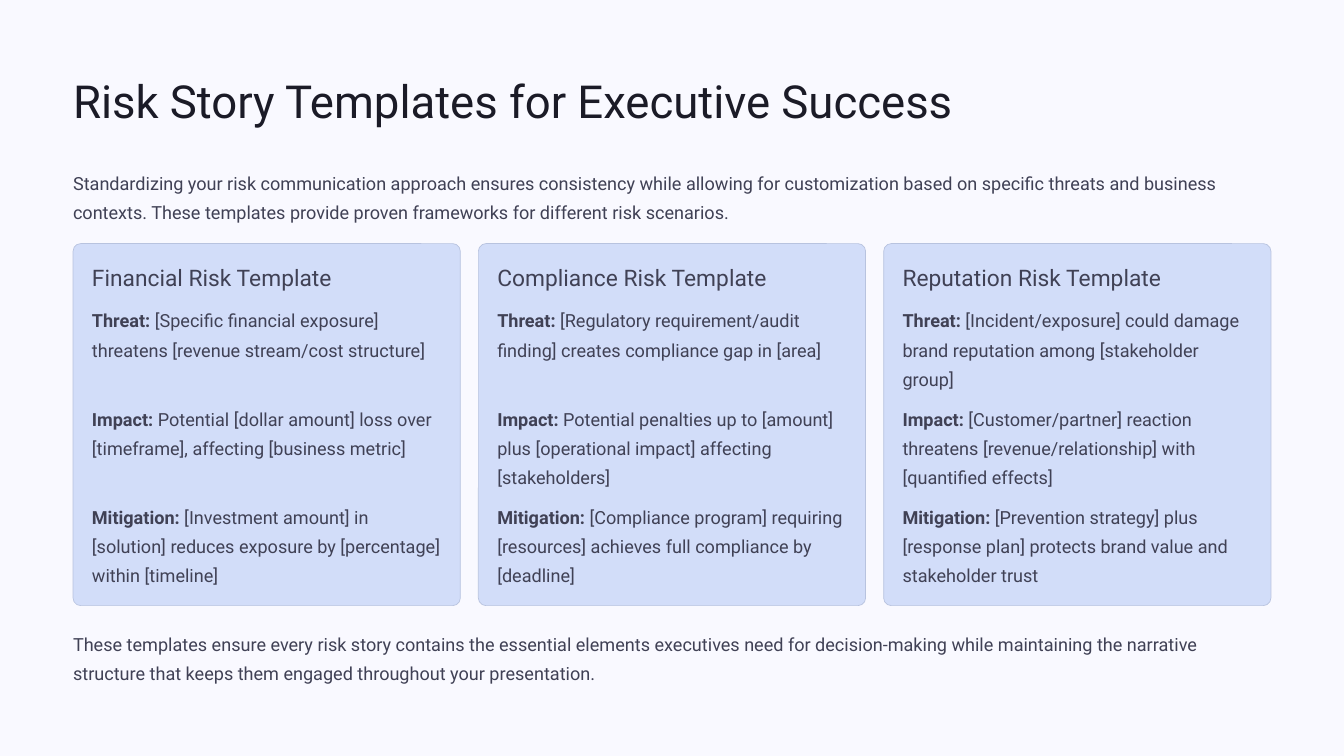
import pptx
import pptx.util
import pptx.dml.color
import pptx.enum.shapes
import pptx.enum.text

Inches, Pt = pptx.util.Inches, pptx.util.Pt

# Content
TITLE = "Risk Story Templates for Executive Success"
INTRO = (
    "Standardizing your risk communication approach ensures consistency while allowing for "
    "customization based on specific threats and business contexts. These templates provide "
    "proven frameworks for different risk scenarios."
)
CLOSING = (
    "These templates ensure every risk story contains the essential elements executives need "
    "for decision-making while maintaining the narrative structure that keeps them engaged "
    "throughout your presentation."
)
LABELS = ["Threat:", "Impact:", "Mitigation:"]
TEMPLATES = [
    ("Financial Risk Template", [
        "[Specific financial exposure] threatens [revenue stream/cost structure]",
        "Potential [dollar amount] loss over [timeframe], affecting [business metric]",
        "[Investment amount] in [solution] reduces exposure by [percentage] within [timeline]",
    ]),
    ("Compliance Risk Template", [
        "[Regulatory requirement/audit finding] creates compliance gap in [area]",
        "Potential penalties up to [amount] plus [operational impact] affecting [stakeholders]",
        "[Compliance program] requiring [resources] achieves full compliance by [deadline]",
    ]),
    ("Reputation Risk Template", [
        "[Incident/exposure] could damage brand reputation among [stakeholder group]",
        "[Customer/partner] reaction threatens [revenue/relationship] with [quantified effects]",
        "[Prevention strategy] plus [response plan] protects brand value and stakeholder trust",
    ]),
]

# Formats
COLORS = {"background": "F9F9FF", "title": "1B1B27", "text": "404155",
          "card": "D2DDF9", "border": "B8C3DF"}
STYLES = {
    "title": {"size": 39, "spacing": 48.5, "color": "title", "wrap": False},
    "heading": {"size": 19.5, "spacing": 24, "color": "text", "wrap": False},
    "body": {"size": 15.5, "spacing": 25, "color": "text", "wrap": True},
}
FRAME_FORMAT = {"margin_left": 0, "margin_right": 0, "margin_top": 0, "margin_bottom": 0,
                "vertical_anchor": pptx.enum.text.MSO_ANCHOR.TOP,
                "auto_size": pptx.enum.text.MSO_AUTO_SIZE.NONE}

# Layout in inches
MARGIN, CONTENT_WIDTH = 0.87, 14.26
CARD_TOP, CARD_WIDTH, CARD_HEIGHT = 2.9, 4.61, 4.31
CARD_STEP = (CONTENT_WIDTH - CARD_WIDTH) / (len(TEMPLATES) - 1)
PADDING = 0.225
HEADING_TOP, FIRST_ENTRY_TOP, ENTRY_STEP = 3.13, 3.6, 1.17


def color(name):
    return pptx.dml.color.RGBColor.from_string(COLORS[name])


def fill_text(shape, runs, style_name):
    """Write (text, bold) runs as one formatted paragraph."""
    style = STYLES[style_name]
    frame = shape.text_frame
    for name, value in FRAME_FORMAT.items():
        setattr(frame, name, value)
    frame.word_wrap = style["wrap"]
    paragraph = frame.paragraphs[0]
    paragraph.alignment = pptx.enum.text.PP_ALIGN.LEFT
    paragraph.line_spacing = Pt(style["spacing"])
    for text, bold in runs:
        run = paragraph.add_run()
        run.text = text
        font_format = {"name": "Roboto", "size": Pt(style["size"]), "bold": bold}
        for name, value in font_format.items():
            setattr(run.font, name, value)
        run.font.color.rgb = color(style["color"])


def add_text(slide, box, runs, style_name):
    shape = slide.shapes.add_textbox(*map(Inches, box))
    fill_text(shape, runs, style_name)


def add_card(slide, left):
    card = slide.shapes.add_shape(
        pptx.enum.shapes.MSO_SHAPE.ROUNDED_RECTANGLE,
        *map(Inches, (left, CARD_TOP, CARD_WIDTH, CARD_HEIGHT)))
    card.adjustments[0] = 0.021
    card.shadow.inherit = False
    card.fill.solid()
    card.fill.fore_color.rgb = color("card")
    card.line.color.rgb = color("border")
    card.line.width = Pt(0.6)


def main():
    presentation = pptx.Presentation()
    presentation.slide_width, presentation.slide_height = Inches(16), Inches(9)
    slide = presentation.slides.add_slide(presentation.slide_layouts.get_by_name("Title Only"))
    slide.background.fill.solid()
    slide.background.fill.fore_color.rgb = color("background")

    # Title and introduction
    title = slide.shapes.title
    title_box = {"left": MARGIN, "top": 0.85, "width": 11.51, "height": 0.68}
    for name, value in title_box.items():
        setattr(title, name, Inches(value))
    fill_text(title, [(TITLE, False)], "title")
    add_text(slide, (MARGIN, 1.96, CONTENT_WIDTH, 0.69), [(INTRO, False)], "body")

    # Template cards
    text_width = CARD_WIDTH - 2 * PADDING
    for column, (heading, entries) in enumerate(TEMPLATES):
        left = MARGIN + column * CARD_STEP
        text_left = left + PADDING
        add_card(slide, left)
        add_text(slide, (text_left, HEADING_TOP, text_width, 0.34), [(heading, False)], "heading")
        for row, (label, entry) in enumerate(zip(LABELS, entries)):
            box = (text_left, FIRST_ENTRY_TOP + row * ENTRY_STEP, text_width, 1.04)
            add_text(slide, box, [(label, True), (" " + entry, False)], "body")

    # Closing statement
    add_text(slide, (MARGIN, 7.45, CONTENT_WIDTH, 0.69), [(CLOSING, False)], "body")
    presentation.save("out.pptx")


if __name__ == "__main__":
    main()
